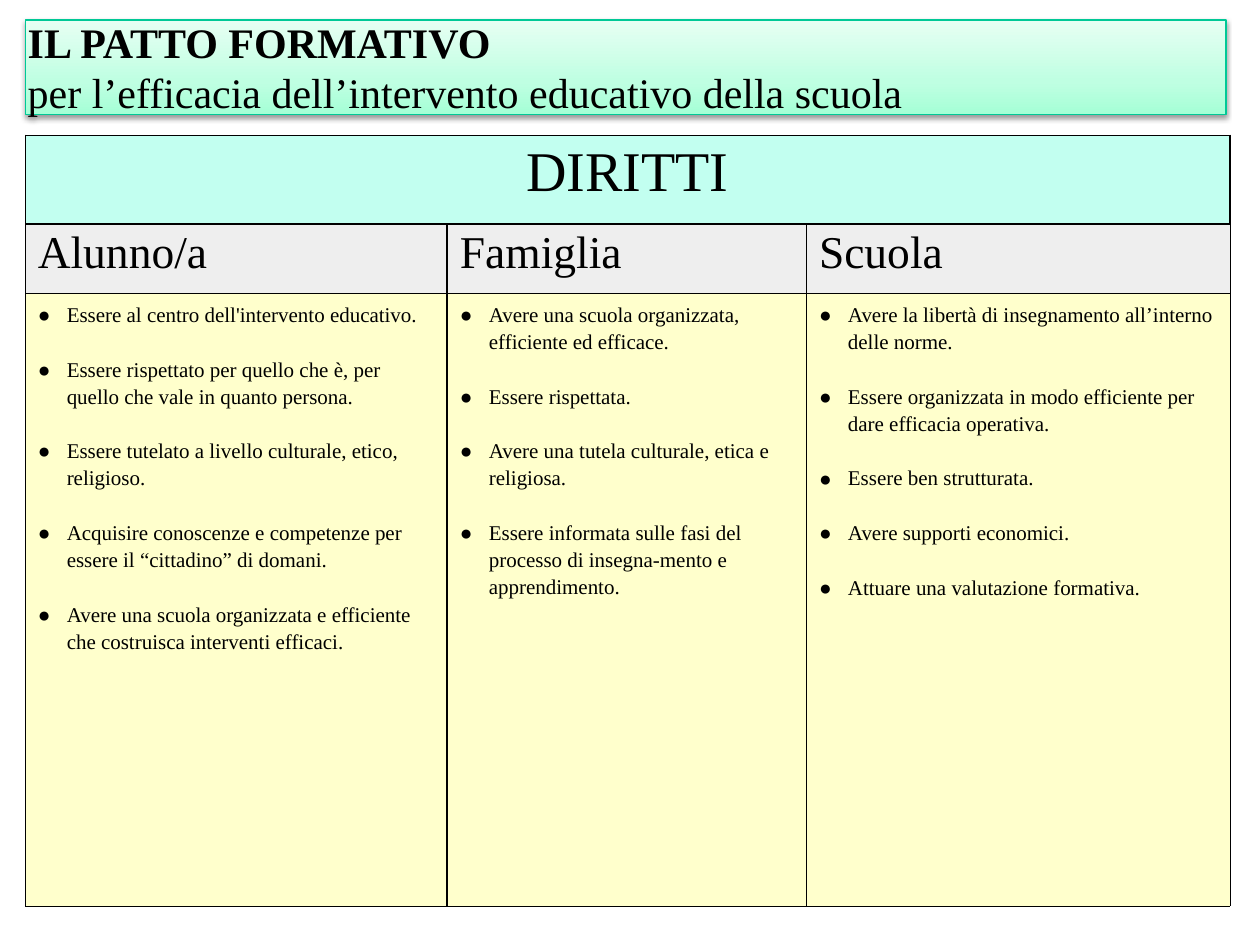
from lxml import etree
from pptx import Presentation
from pptx.dml.color import RGBColor
from pptx.enum.text import MSO_ANCHOR, PP_ALIGN
from pptx.oxml import parse_xml
from pptx.oxml.ns import nsdecls, qn
from pptx.util import Inches, Pt

TOP, MIDDLE = MSO_ANCHOR.TOP, MSO_ANCHOR.MIDDLE
LEFT, CENTER = PP_ALIGN.LEFT, PP_ALIGN.CENTER
TITLE_ONLY = 5
FONT = "Times New Roman"
BLACK = "000000"
THIN, THICK = 0.11, 1.13

COLUMN_WIDTHS = [3.35, 2.85, 3.36]
ROW_HEIGHTS = [0.71, 0.55, 4.86]
RIGHTS = {
    "Alunno/a": [
        "Essere al centro dell'intervento educativo.",
        "Essere rispettato per quello che è, per quello che vale in quanto persona.",
        "Essere tutelato a livello culturale, etico, religioso.",
        "Acquisire conoscenze e competenze per essere il “cittadino” di domani.",
        "Avere una scuola organizzata e efficiente che costruisca interventi efficaci.",
    ],
    "Famiglia": [
        "Avere una scuola organizzata, efficiente ed efficace.",
        "Essere rispettata.",
        "Avere una tutela culturale, etica e religiosa.",
        "Essere informata sulle fasi del processo di insegna-mento e apprendimento.",
    ],
    "Scuola": [
        "Avere la libertà di insegnamento all’interno delle norme.",
        "Essere organizzata in modo efficiente per dare efficacia operativa.",
        "Essere ben strutturata.",
        "Avere supporti economici.",
        "Attuare una valutazione formativa.",
    ],
}


def color(hex_text):
    return RGBColor.from_string(hex_text)


def add_span(para, text, size, bold=False):
    span = para.add_run()
    span.text = text
    span.font.name = FONT
    span.font.size = Pt(size)
    span.font.bold = bold
    span.font.color.rgb = color(BLACK)


def set_insets(target, horizontal, vertical):
    target.margin_left = target.margin_right = Inches(horizontal)
    target.margin_top = target.margin_bottom = Inches(vertical)


def add_gradient_and_shadow(shape):
    stops = "".join(
        f'<a:gs pos="{position * 1000}"><a:srgbClr val="{shade}"/></a:gs>'
        for position, shade in [(0, "A5FFD6"), (35, "BFFFE2"), (100, "E7FFF3")])
    gradient = parse_xml(
        f'<a:gradFill {nsdecls("a")} rotWithShape="1"><a:gsLst>{stops}</a:gsLst>'
        '<a:lin ang="16200000" scaled="0"/></a:gradFill>')
    shadow = parse_xml(
        f'<a:effectLst {nsdecls("a")}><a:outerShdw blurRad="{Pt(3.1)}" '
        f'dist="{Pt(1.6)}" dir="5400000" rotWithShape="0"><a:srgbClr val="{BLACK}">'
        '<a:alpha val="38000"/></a:srgbClr></a:outerShdw></a:effectLst>')
    outline = shape.line._get_or_add_ln()
    outline.addprevious(gradient)
    outline.addnext(shadow)


def fill_title(title, left, top, width, height):
    title.left, title.top = Inches(left), Inches(top)
    title.width, title.height = Inches(width), Inches(height)
    title.line.color.rgb = color("00C896")
    title.line.width = Pt(0.75)
    add_gradient_and_shadow(title)
    frame = title.text_frame
    frame.word_wrap = True
    frame.vertical_anchor = TOP
    set_insets(frame, 0.02, -0.03)
    first, second = frame.paragraphs[0], frame.add_paragraph()
    first.alignment = second.alignment = LEFT
    add_span(first, "IL PATTO FORMATIVO", 24, bold=True)
    add_span(second, "per l’efficacia dell’intervento educativo della scuola", 24)


def set_borders(cell, left, top, right, bottom):
    properties = cell._tc.get_or_add_tcPr()
    widths = {"a:lnL": left, "a:lnR": right, "a:lnT": top, "a:lnB": bottom}
    for index, (tag, width) in enumerate(widths.items()):
        line = etree.Element(qn(tag), w=str(Pt(width)))
        fill = etree.SubElement(line, qn("a:solidFill"))
        etree.SubElement(fill, qn("a:srgbClr"), val=BLACK)
        properties.insert(index, line)


def fill_heading(cell, text, size, background, alignment=LEFT):
    cell.fill.solid()
    cell.fill.fore_color.rgb = color(background)
    cell.vertical_anchor = MIDDLE
    set_insets(cell, 0.1, 0.1)
    para = cell.text_frame.paragraphs[0]
    para.alignment = alignment
    para.line_spacing = 0.62
    add_span(para, text, size)


def add_bullet(para):
    properties = para._p.get_or_add_pPr()
    properties.set("marL", str(Inches(0.23)))
    properties.set("indent", str(Inches(-0.23)))
    bullet_color = etree.SubElement(properties, qn("a:buClr"))
    etree.SubElement(bullet_color, qn("a:srgbClr"), val=BLACK)
    etree.SubElement(properties, qn("a:buFont"), typeface=FONT)
    etree.SubElement(properties, qn("a:buChar"), char="●")


def fill_list(cell, items):
    cell.fill.solid()
    cell.fill.fore_color.rgb = color("FFFFCC")
    cell.vertical_anchor = TOP
    set_insets(cell, 0.1, 0.05)
    frame = cell.text_frame
    for index, item in enumerate(items):
        para = frame.add_paragraph() if index else frame.paragraphs[0]
        para.line_spacing = 1.17
        if index:
            para.space_before = Pt(15.6)
        add_bullet(para)
        add_span(para, item, 12)


def add_rights_table(page, left, top, width, height):
    table = page.shapes.add_table(
        len(ROW_HEIGHTS), len(COLUMN_WIDTHS), Inches(left), Inches(top),
        Inches(width), Inches(height)).table
    for column, column_width in zip(table.columns, COLUMN_WIDTHS):
        column.width = Inches(column_width)
    for row, row_height in zip(table.rows, ROW_HEIGHTS):
        row.height = Inches(row_height)

    # Heading across all columns
    last = len(COLUMN_WIDTHS) - 1
    table.cell(0, 0).merge(table.cell(0, last))
    fill_heading(table.cell(0, 0), "DIRITTI", 32, "C2FFF0", CENTER)
    for index in range(last + 1):
        set_borders(table.cell(0, index), THIN, THIN, THICK, THICK)

    # One column for each party: name, then list of rights
    for index, (party, items) in enumerate(RIGHTS.items()):
        name_cell, list_cell = table.cell(1, index), table.cell(2, index)
        left_line = THICK if index else THIN
        right_line = THIN if index == last else THICK
        fill_heading(name_cell, party, 26, "EEEEEE")
        set_borders(name_cell, left_line, THICK, right_line, THICK)
        fill_list(list_cell, items)
        set_borders(list_cell, left_line, THICK, right_line, THIN)


def main():
    deck = Presentation()
    deck.slide_width, deck.slide_height = Inches(10), Inches(7.5)
    page = deck.slides.add_slide(deck.slide_layouts[TITLE_ONLY])
    fill_title(page.shapes.title, 0.2, 0.16, 9.53, 0.75)
    add_rights_table(page, 0.2, 1.07, 9.56, 6.12)
    deck.save("out.pptx")


if __name__ == "__main__":
    main()
